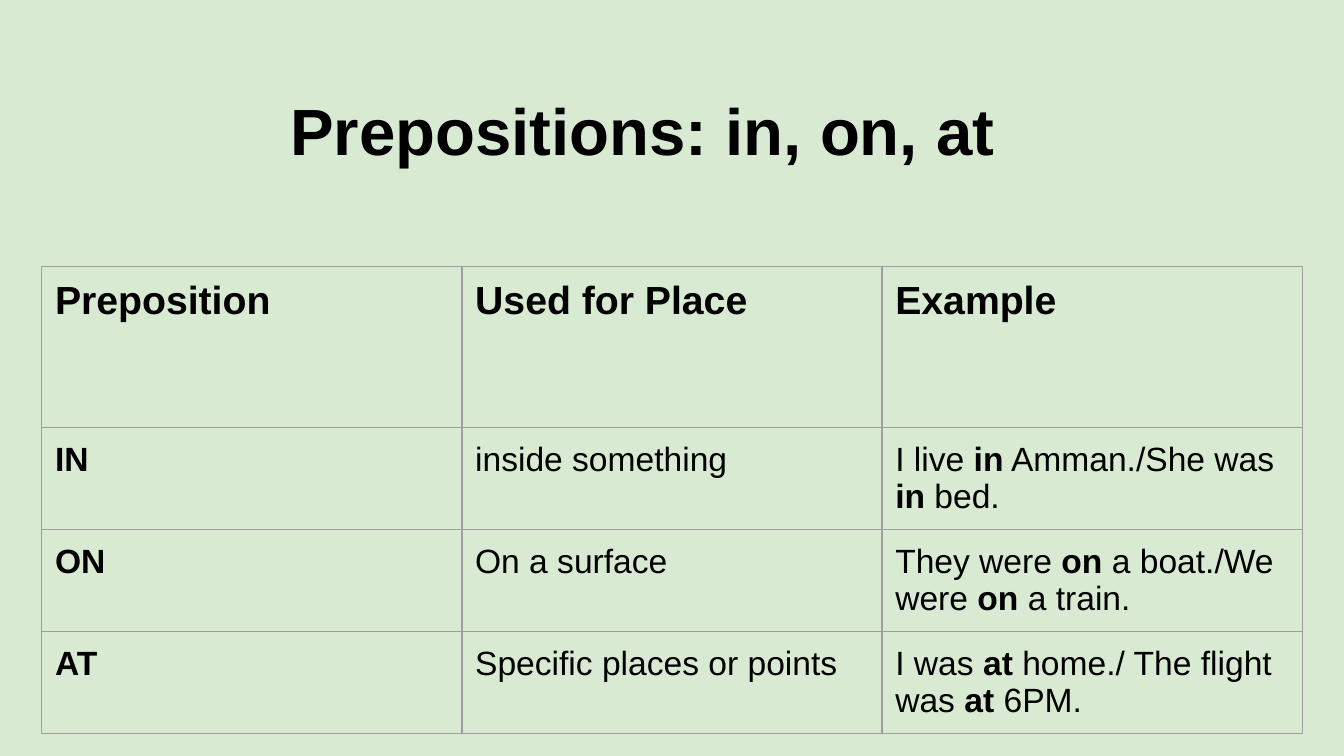
from lxml import etree
from pptx import Presentation
from pptx.dml.color import RGBColor
from pptx.enum.text import MSO_ANCHOR, PP_ALIGN
from pptx.oxml.ns import qn
from pptx.util import Cm, Pt

CENTER = PP_ALIGN.CENTER
TOP = MSO_ANCHOR.TOP

# Content: each text is a list of (words, bold) runs
TITLE = [("Prepositions: in, on, at", True)]
ROWS = [
    [[("Preposition", True)], [("Used for Place", True)], [("Example", True)]],
    [[("IN", True)], [("inside something", False)],
     [("I live ", False), ("in", True), (" Amman./She was ", False),
      ("in", True), (" bed.", False)]],
    [[("ON", True)], [("On a surface", False)],
     [("They were ", False), ("on", True), (" a boat./We were ", False),
      ("on", True), (" a train.", False)]],
    [[("AT", True)], [("Specific places or points", False)],
     [("I was ", False), ("at", True), (" home./ The flight was ", False),
      ("at ", True), ("6PM.", False)]],
]

FONT = "Arial"
BACKGROUND, INK, BORDER = "D9EAD3", "000000", "9E9E9E"
TITLE_SIZE, HEADER_SIZE, BODY_SIZE = 35, 21, 18
INSET = Cm(0.25)
COLUMN_WIDTH = Cm(7.94)
HEADER_HEIGHT, BODY_HEIGHT = Cm(3.05), Cm(1.93)


def color(value):
    return RGBColor.from_string(value)


def add_runs(paragraph, runs, size):
    for words, bold in runs:
        run = paragraph.add_run()
        run.text = words
        run.font.name = FONT
        run.font.size = Pt(size)
        run.font.bold = bold
        run.font.color.rgb = color(INK)


def set_margins(holder):
    holder.margin_left = holder.margin_right = INSET
    holder.margin_top = holder.margin_bottom = INSET


def add_borders(cell):
    properties = cell._tc.get_or_add_tcPr()
    for position, side in enumerate(("lnL", "lnR", "lnT", "lnB")):
        line = etree.Element(qn(f"a:{side}"), w=str(Pt(0.75)))
        fill = etree.SubElement(line, qn("a:solidFill"))
        etree.SubElement(fill, qn("a:srgbClr"), val=BORDER)
        properties.insert(position, line)


presentation = Presentation()
presentation.slide_width = Cm(25.4)
presentation.slide_height = Cm(14.29)
slide = presentation.slides.add_slide(presentation.slide_layouts[6])
slide.background.fill.solid()
slide.background.fill.fore_color.rgb = color(BACKGROUND)

# Table
row_count, column_count = len(ROWS), len(ROWS[0])
table = slide.shapes.add_table(
    row_count, column_count, Cm(0.79), Cm(5.03), COLUMN_WIDTH * column_count,
    HEADER_HEIGHT + BODY_HEIGHT * (row_count - 1)).table
table.first_row = table.horz_banding = False
for column in table.columns:
    column.width = COLUMN_WIDTH
for row_index, texts in enumerate(ROWS):
    is_header = row_index == 0
    table.rows[row_index].height = HEADER_HEIGHT if is_header else BODY_HEIGHT
    for column_index, runs in enumerate(texts):
        cell = table.cell(row_index, column_index)
        cell.fill.background()
        add_borders(cell)
        set_margins(cell)
        cell.vertical_anchor = TOP
        add_runs(cell.text_frame.paragraphs[0], runs,
                 HEADER_SIZE if is_header else BODY_SIZE)

# Title
title = slide.shapes.add_textbox(Cm(1.37), Cm(1.32), Cm(21.56), Cm(2.46))
frame = title.text_frame
frame.word_wrap = True
set_margins(frame)
frame.margin_top = Cm(0.38)
frame.vertical_anchor = TOP
frame.paragraphs[0].alignment = CENTER
add_runs(frame.paragraphs[0], TITLE, TITLE_SIZE)

presentation.save("out.pptx")
